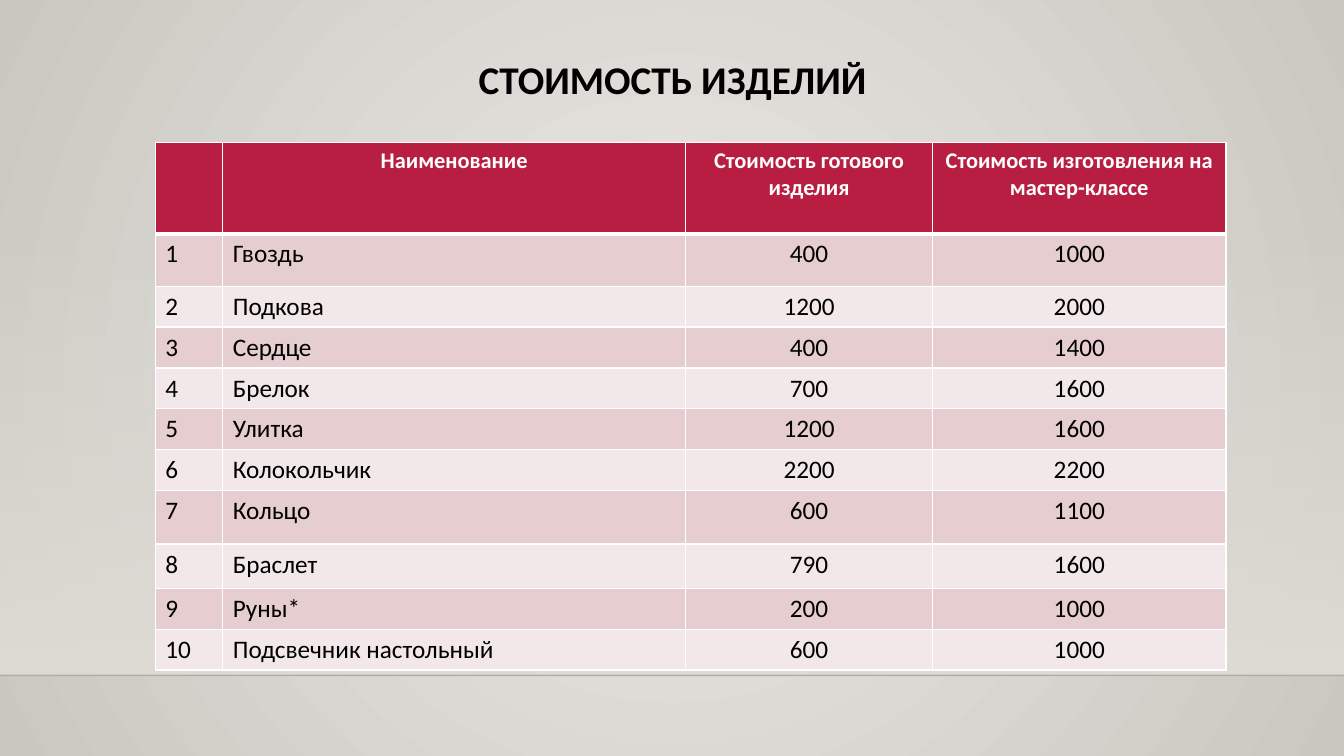
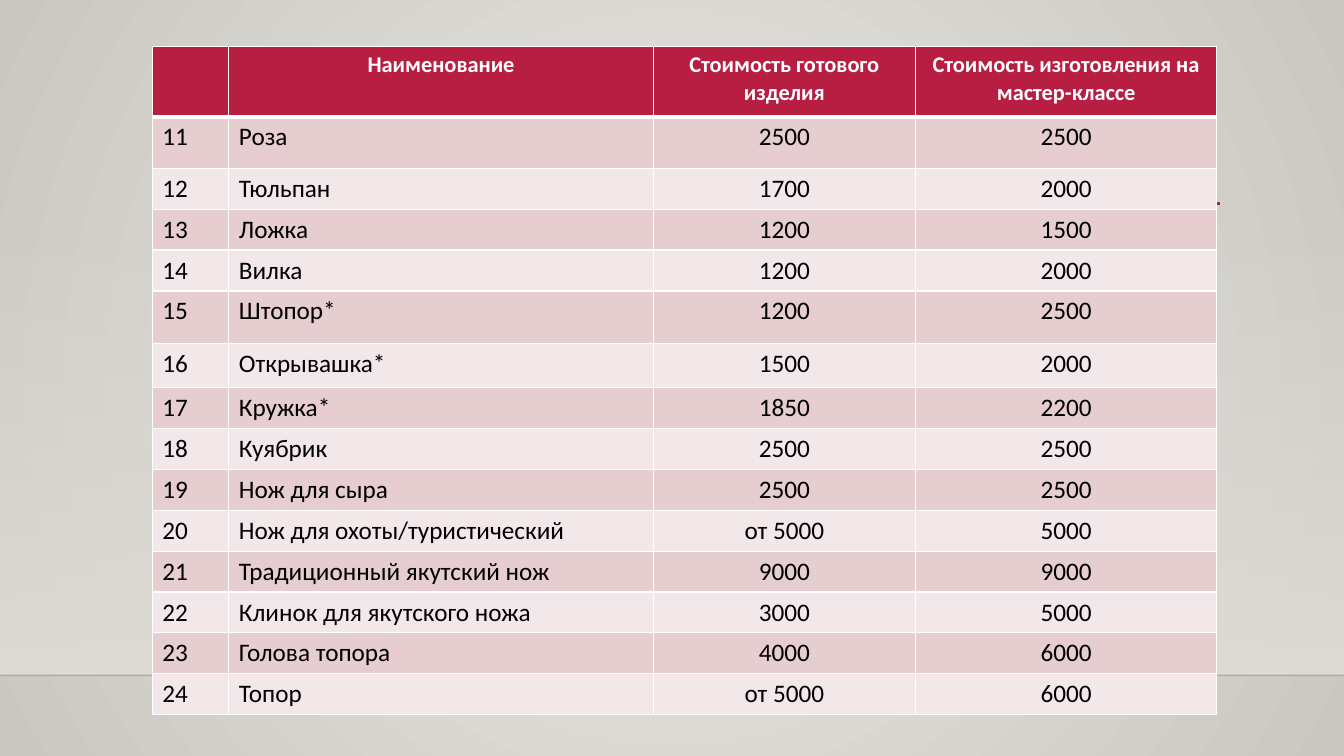
from lxml import etree
from pptx import Presentation
from pptx import util as u
from pptx.dml.color import RGBColor
from pptx.enum import shapes, text
from pptx.oxml.ns import qn

PX = 9144
WIDTH, HEIGHT = 1333, 750
FONT = "Calibri"
ACCENT, WHITE, BLACK = "B71E42", "FFFFFF", "000000"
STRIPES = ("F3E8E9", "E6CDCF")
ROW_HEIGHT = 40
HEADINGS = (
    "",
    "Наименование",
    "Стоимость готового изделия",
    "Стоимость изготовления на мастер-классе",
)
FIRST_PRICES = (
    ("Гвоздь", "400", "1000"),
    ("Подкова", "1200", "2000"),
    ("Сердце", "400", "1400"),
    ("Брелок", "700", "1600"),
    ("Улитка", "1200", "1600"),
    ("Колокольчик", "2200", "2200"),
    ("Кольцо", "600", "1100"),
    ("Браслет", "790", "1600"),
    ("Руны*", "200", "1000"),
    ("Подсвечник настольный", "600", "1000"),
)
SECOND_PRICES = (
    ("Роза", "2500", "2500"),
    ("Тюльпан", "1700", "2000"),
    ("Ложка", "1200", "1500"),
    ("Вилка", "1200", "2000"),
    ("Штопор*", "1200", "2500"),
    ("Открывашка*", "1500", "2000"),
    ("Кружка*", "1850", "2200"),
    ("Куябрик", "2500", "2500"),
    ("Нож для сыра", "2500", "2500"),
    ("Нож для охоты/туристический", "от 5000", "5000"),
    ("Традиционный якутский нож", "9000", "9000"),
    ("Клинок для якутского ножа", "3000", "5000"),
    ("Голова топора", "4000", "6000"),
    ("Топор", "от 5000", "6000"),
)


def px(length):
    return u.Emu(length * PX)


def rgb(code):
    return RGBColor.from_string(code)


def set_alpha(color, percent):
    etree.SubElement(color, qn("a:alpha")).set("val", str(percent * 1000))


class PriceDeck:
    """Hold the deck style and draw elements on the current page."""

    def __init__(self):
        self.deck = Presentation()
        self.deck.slide_width, self.deck.slide_height = px(WIDTH), px(HEIGHT)
        master = self.deck.slide_master
        gradient = self.gradient(master, master.background.fill, ("ECEAE7", "CAC7C1"))
        gradient.remove(gradient.find(qn("a:lin")))
        circle = etree.SubElement(gradient, qn("a:path"), path="circle")
        etree.SubElement(circle, qn("a:fillToRect"), l="50000", t="50000", r="50000", b="50000")

    def gradient(self, owner, fill, colors):
        fill.gradient()
        for stop, position, color in zip(fill.gradient_stops, (0, 1), colors):
            stop.position = position
            stop.color.rgb = rgb(color)
        return owner.element.xpath(".//a:gradFill")[0]

    def add_page(self, title=""):
        layout = self.deck.slide_layouts[5 if title else 6]
        self.page = self.deck.slides.add_slide(layout)
        self.band(221, 449)
        set_alpha(self.line(0, WIDTH, 670, "000001", 1), 20)
        self.line(159, 1210, 202, ACCENT, 2.5)
        if title:
            self.title(title)

    def band(self, top, height):
        box = self.page.shapes.add_shape(
            shapes.MSO_SHAPE.RECTANGLE, 0, px(top), px(WIDTH), px(height))
        box.shadow.inherit = False
        box.line.fill.background()
        gradient = self.gradient(box, box.fill, ("DFDBD5", "DFDBD5"))
        box.fill.gradient_angle = 270
        set_alpha(gradient.xpath(".//a:srgbClr")[0], 0)

    def line(self, left, right, top, color, weight):
        rule = self.page.shapes.add_connector(
            shapes.MSO_CONNECTOR.STRAIGHT, px(left), px(top), px(right), px(top))
        rule.line.color.rgb = rgb(color)
        rule.line.width = u.Pt(weight)
        etree.SubElement(rule._element.spPr, qn("a:effectLst"))
        return rule._element.xpath(".//a:srgbClr")[0]

    def title(self, words):
        box = self.page.shapes.title
        box.left, box.top, box.width, box.height = map(px, (142, 55, 1050, 115))
        frame = box.text_frame
        frame.auto_size = text.MSO_AUTO_SIZE.NONE
        frame.vertical_anchor = text.MSO_ANCHOR.TOP
        para = frame.paragraphs[0]
        para.line_spacing = 0.9
        self.add_text(para, words, 28, BLACK, True, True)

    def add_text(self, para, words, size, color, bold, centred):
        para.alignment = text.PP_ALIGN.CENTER if centred else text.PP_ALIGN.LEFT
        if not words:
            return
        span = para.add_run()
        span.text = words
        span.font.name, span.font.size, span.font.bold = FONT, u.Pt(size), bold
        span.font.color.rgb = rgb(color)

    def borders(self, cell, row):
        weights = {"L": 1, "R": 1, "T": 3 if row == 1 else 1, "B": 3 if row == 0 else 1}
        properties = cell._tc.get_or_add_tcPr()
        for side, weight in weights.items():
            edge = etree.SubElement(properties, qn("a:ln" + side), w=str(int(u.Pt(weight))))
            paint = etree.SubElement(edge, qn("a:solidFill"))
            etree.SubElement(paint, qn("a:srgbClr"), val=WHITE)

    def table(self, left, top, widths, header_height, tall_rows, first, prices):
        rows = [HEADINGS]
        rows += [(str(number), *price) for number, price in enumerate(prices, first)]
        heights = [header_height]
        heights += [tall_rows.get(row, ROW_HEIGHT) for row in range(1, len(rows))]
        table = self.page.shapes.add_table(
            len(rows), len(widths), px(left), px(top),
            px(sum(widths)), px(sum(heights))).table
        for column, width in zip(table.columns, widths):
            column.width = px(width)
        for row, (words, height) in enumerate(zip(rows, heights)):
            table.rows[row].height = px(height)
            header = row == 0
            size, color = (16, WHITE) if header else (18, BLACK)
            for column, word in enumerate(words):
                cell = table.cell(row, column)
                self.borders(cell, row)
                cell.fill.solid()
                cell.fill.fore_color.rgb = rgb(ACCENT if header else STRIPES[row % 2])
                self.add_text(cell.text_frame.paragraphs[0], word, size, color,
                              header, header or column > 1)


def main():
    prices = PriceDeck()
    prices.add_page("СТОИМОСТЬ ИЗДЕЛИЙ")
    prices.table(154, 141, (67, 459, 245, 291), 91, {1: 52, 7: 53, 8: 44}, 1, FIRST_PRICES)
    prices.add_page()
    prices.table(151, 46, (76, 421, 260, 299), 70, {1: 51, 5: 52, 6: 44}, 11, SECOND_PRICES)
    prices.deck.save("out.pptx")


if __name__ == "__main__":
    main()
